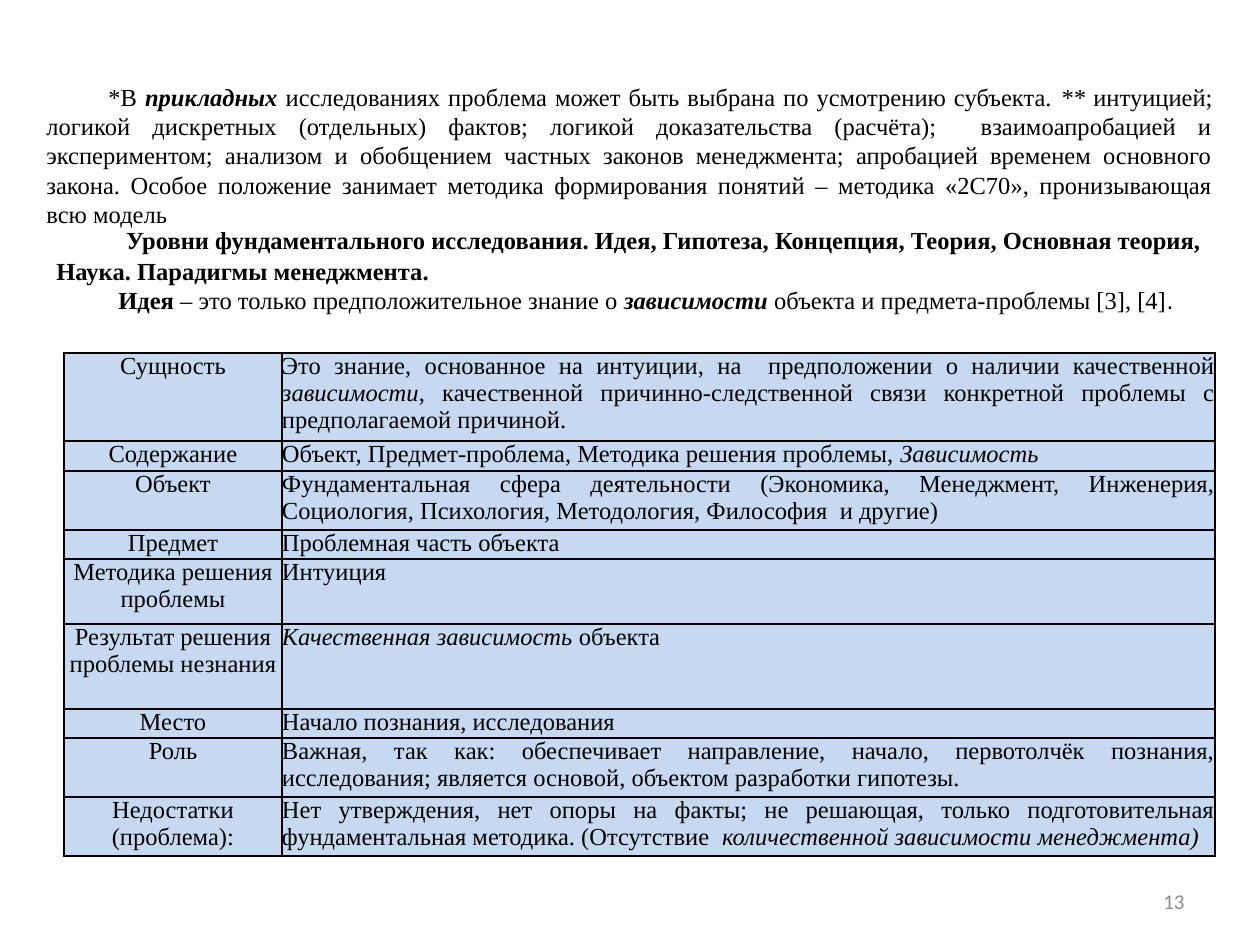
import pptx
import pptx.util
import pptx.dml.color
import pptx.enum.text
import pptx.oxml.ns
from lxml import etree

PX = 914400 / 126
BLACK = pptx.dml.color.RGBColor(0x00, 0x00, 0x00)
GRAY = pptx.dml.color.RGBColor(0x8C, 0x8C, 0x8C)
BLUE = pptx.dml.color.RGBColor(0xC6, 0xD9, 0xF1)
ALIGN = pptx.enum.text.PP_ALIGN
ANCHOR = pptx.enum.text.MSO_ANCHOR


def px(n):
    return pptx.util.Emu(round(n * PX))


def add_text(p, text, size=14, font="Times New Roman", color=BLACK, bold=False, italic=False):
    r = p.add_run()
    r.text = text
    r.font.size = pptx.util.Pt(size)
    r.font.name = font
    r.font.color.rgb = color
    r.font.bold = bold
    r.font.italic = italic


B = {"bold": True}
I = {"italic": True}
BI = {"bold": True, "italic": True}

boxes = [
    ((34, 76, 1191, 161), 6, ALIGN.JUSTIFY, [
        [("*В ", {}), ("прикладных", BI),
         (" исследованиях проблема может быть выбрана по усмотрению субъекта. ", {}),
         ("** ", I),
         ("интуицией; логикой дискретных (отдельных) фактов; логикой доказательства (расчёта);  "
          "взаимоапробацией и экспериментом; анализом и обобщением частных законов менеджмента; "
          "апробацией временем основного закона. Особое положение занимает методика формирования "
          "понятий – методика «2С70», пронизывающая всю модель", {})],
    ]),
    ((44, 214, 1171, 111), 13, ALIGN.LEFT, [
        [(" ", {"size": 18, "bold": True}),
         ("Уровни фундаментального исследования. Идея, Гипотеза, Концепция, Теория, "
          "Основная теория, Наука. Парадигмы менеджмента.", B)],
        [("Идея", B), (" – это только предположительное знание о ", {}),
         ("зависимости", BI), (" объекта и предмета-проблемы [3], [4]", {}),
         (".", {"font": "Arial"})],
    ]),
]

rows = [
    (88, "Сущность", [
        ("Это знание, основанное на интуиции, на  предположении о наличии качественной ", {}),
        ("зависимости", I),
        (", качественной причинно-следственной связи конкретной проблемы с предполагаемой причиной.", {})]),
    (30, "Содержание", [
        ("Объект, Предмет-проблема, Методика решения проблемы, ", {}), ("Зависимость", I)]),
    (59, "Объект", [
        ("Фундаментальная сфера деятельности (Экономика, Менеджмент, Инженерия, Социология, "
         "Психология, Методология, Философия  и другие)", {})]),
    (29, "Предмет", [("Проблемная часть объекта", {})]),
    (65, "Методика решения проблемы", [("Интуиция", {})]),
    (85, "Результат решения проблемы незнания", [
        ("Качественная зависимость", I), (" объекта", {})]),
    (29, "Место", [("Начало познания, исследования", {})]),
    (59, "Роль", [
        ("Важная, так как: обеспечивает направление, начало, первотолчёк познания, исследования; "
         "является основой, объектом разработки гипотезы.", {})]),
    (59, "Недостатки (проблема):", [
        ("Нет утверждения, нет опоры на факты; не решающая, только подготовительная "
         "фундаментальная методика. (Отсутствие  ", {}),
        ("количественной зависимости менеджмента)", I)]),
]

prs = pptx.Presentation()
prs.slide_width = pptx.util.Inches(10)
prs.slide_height = pptx.util.Inches(7.5)
s = prs.slides.add_slide(prs.slide_layouts[6])

sp = s.shapes.add_textbox(px(903), px(876), px(294), px(50))
tf = sp.text_frame
tf.word_wrap = True
tf.vertical_anchor = ANCHOR.MIDDLE
p = tf.paragraphs[0]
p.alignment = ALIGN.RIGHT
add_text(p, "13", size=12, font="Calibri", color=GRAY)

for box, inset, align, paragraphs in boxes:
    sp = s.shapes.add_textbox(*map(px, box))
    tf = sp.text_frame
    tf.word_wrap = True
    tf.margin_top = px(inset)
    for i, runs in enumerate(paragraphs):
        p = tf.add_paragraph() if i else tf.paragraphs[0]
        p.alignment = align
        p.line_spacing = pptx.util.Pt(16.75)
        p._p.get_or_add_pPr().set("indent", str(px(62)))
        for text, fmt in runs:
            add_text(p, text, **fmt)

table_height = sum(height for height, label, runs in rows)
table = s.shapes.add_table(len(rows), 2, px(64), px(353), px(1151), px(table_height)).table
table.first_row = False
table.horz_banding = False
table.columns[0].width = px(218)
table.columns[1].width = px(933)

for i, (height, label, runs) in enumerate(rows):
    table.rows[i].height = px(height)
    for j, (align, content) in enumerate([(ALIGN.CENTER, [(label, {})]), (ALIGN.JUSTIFY, runs)]):
        cell = table.cell(i, j)
        cell.margin_left = cell.margin_right = cell.margin_top = cell.margin_bottom = 0
        p = cell.text_frame.paragraphs[0]
        p.alignment = align
        p.line_spacing = pptx.util.Pt(15.4)
        for text, fmt in content:
            add_text(p, text, **fmt)
        tcPr = cell._tc.get_or_add_tcPr()
        for side in ("lnL", "lnR", "lnT", "lnB"):
            ln = etree.SubElement(tcPr, pptx.oxml.ns.qn("a:" + side), w=str(pptx.util.Pt(1)))
            fill = etree.SubElement(ln, pptx.oxml.ns.qn("a:solidFill"))
            etree.SubElement(fill, pptx.oxml.ns.qn("a:srgbClr"), val=str(BLACK))
        cell.fill.solid()
        cell.fill.fore_color.rgb = BLUE

prs.save("out.pptx")
